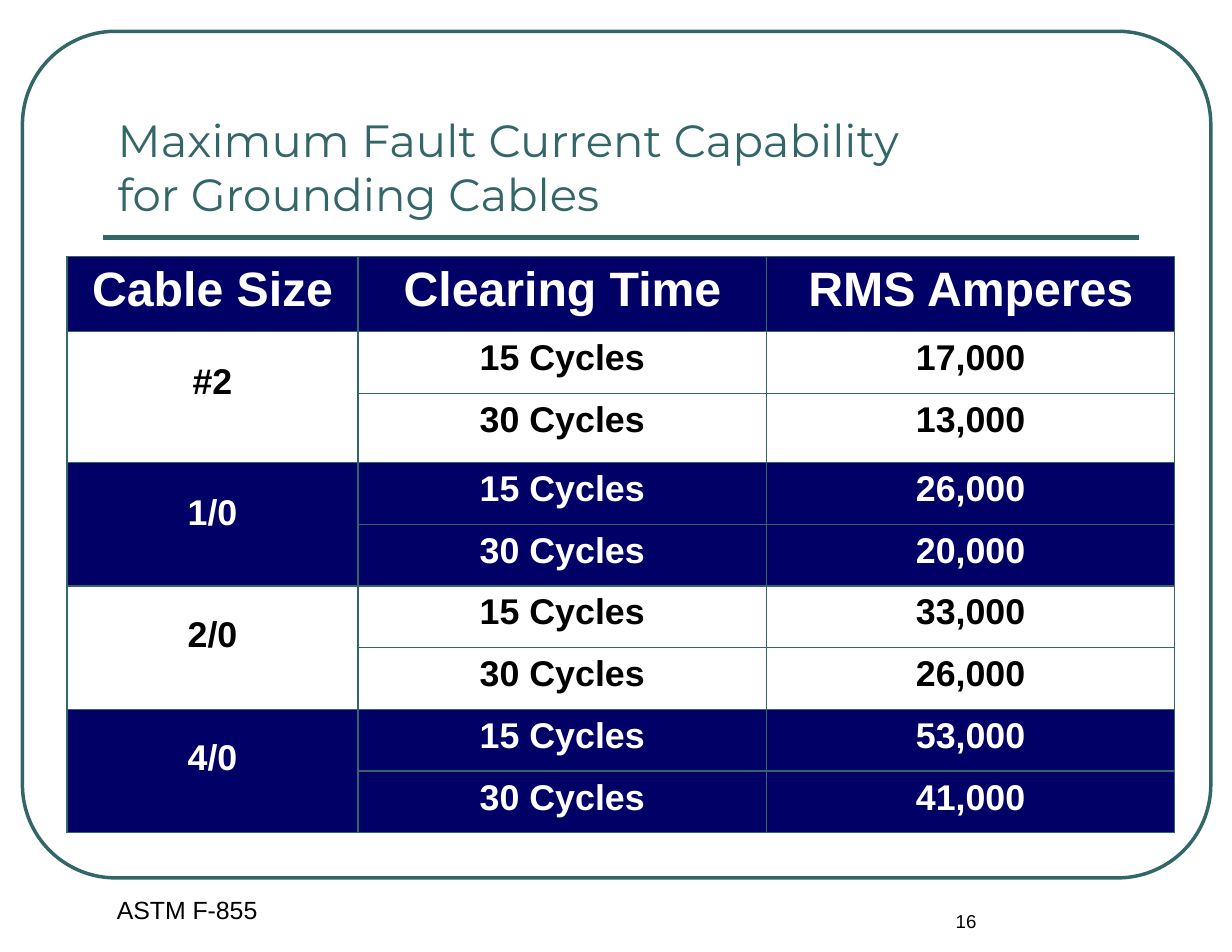
from lxml import etree
from pptx import Presentation
from pptx.dml.color import RGBColor
from pptx.enum.shapes import MSO_CONNECTOR, MSO_SHAPE
from pptx.enum.text import MSO_ANCHOR, MSO_AUTO_SIZE, PP_ALIGN
from pptx.oxml.ns import qn
from pptx.util import Cm, Pt

CENTER, LEFT = PP_ALIGN.CENTER, PP_ALIGN.LEFT
BOTTOM = MSO_ANCHOR.BOTTOM
NO_FIT = MSO_AUTO_SIZE.NONE
ROUNDED = MSO_SHAPE.ROUNDED_RECTANGLE
STRAIGHT = MSO_CONNECTOR.STRAIGHT

TEAL, NAVY, WHITE, BLACK = "336666", "000066", "FFFFFF", "000000"


def color(value):
    return RGBColor.from_string(value)


class CableSlide:
    """Holds the slide and its style."""

    insets = {"margin_left": Cm(0.28), "margin_right": Cm(0.28),
              "margin_top": Cm(0.15), "margin_bottom": Cm(0.15)}

    def __init__(self, slide):
        self.slide = slide
        self.shapes = slide.shapes

    def apply(self, target, values):
        for name, value in values.items():
            setattr(target, name, value)

    def set_text(self, frame, text, size, ink, font="Arial", bold=False,
                 align=CENTER, spacing=None):
        frame.text = text
        paragraph = frame.paragraphs[0]
        self.apply(paragraph, {"alignment": align, "line_spacing": spacing})
        for run in paragraph.runs:
            self.apply(run.font, {"name": font, "size": Pt(size), "bold": bold})
            run.font.color.rgb = color(ink)

    def frame(self, left, top, width, height, radius):
        border = self.shapes.add_shape(ROUNDED, Cm(left), Cm(top), Cm(width), Cm(height))
        border.adjustments[0] = radius
        border.shadow.inherit = False
        border.fill.background()
        border.line.color.rgb = color(TEAL)
        border.line.width = Pt(2.25)

    def rule(self, left, right, y):
        rule = self.shapes.add_connector(STRAIGHT, Cm(left), Cm(y), Cm(right), Cm(y))
        rule.line.color.rgb = color(TEAL)
        rule.line.width = Pt(3)
        etree.SubElement(rule._element.spPr, qn("a:effectLst"))

    def title(self, text, left, top, width, height):
        title = self.shapes.title
        self.apply(title, {"left": Cm(left), "top": Cm(top),
                           "width": Cm(width), "height": Cm(height)})
        self.apply(title.text_frame, {**self.insets, "vertical_anchor": BOTTOM,
                                      "auto_size": NO_FIT, "word_wrap": True})
        self.set_text(title.text_frame, text, 29, TEAL, "Montserrat", align=LEFT)

    def label(self, text, left, top, width, height, size, wrap=True):
        label = self.shapes.add_textbox(Cm(left), Cm(top), Cm(width), Cm(height))
        label.text_frame.word_wrap = wrap
        self.set_text(label.text_frame, text, size, BLACK)

    def table(self, left, top, widths, heights):
        table = self.shapes.add_table(
            len(heights), len(widths), Cm(left), Cm(top),
            Cm(sum(widths)), Cm(sum(heights))).table
        for column, width in zip(table.columns, widths):
            column.width = Cm(width)
        for row, height in zip(table.rows, heights):
            row.height = Cm(height)
        return table

    def cell(self, cell, text, size, ink, fill, spacing=None):
        self.apply(cell, self.insets)
        if text:
            self.set_text(cell.text_frame, text, size, ink, bold=True, spacing=spacing)
        properties = cell._tc.get_or_add_tcPr()
        for side in ("a:lnL", "a:lnR", "a:lnT", "a:lnB"):
            edge = etree.SubElement(properties, qn(side), w=str(Pt(1)))
            paint = etree.SubElement(edge, qn("a:solidFill"))
            etree.SubElement(paint, qn("a:srgbClr"), val=TEAL)
        cell.fill.solid()
        cell.fill.fore_color.rgb = color(fill)


def main():
    deck = Presentation()
    deck.slide_width, deck.slide_height = Cm(27.94), Cm(21.59)
    page = CableSlide(deck.slides.add_slide(deck.slide_layouts[5]))

    # Border, title and rule
    page.frame(0.51, 0.71, 26.95, 19.2, 0.11)
    page.rule(2.34, 25.83, 5.38)
    page.title("Maximum Fault Current Capability\vfor Grounding Cables",
               2.39, 1.55, 23.83, 3.61)

    # Ratings: cable size, line spacing of its cell, amperes per clearing time
    headings = ["Cable Size", "Clearing Time", "RMS Amperes"]
    clearing_times = ["15 Cycles", "30 Cycles"]
    ratings = [
        ("#2", 1.6, ["17,000", "13,000"]),
        ("1/0", 1.6, ["26,000", "20,000"]),
        ("2/0", 1.55, ["33,000", "26,000"]),
        ("4/0", 1.55, ["53,000", "41,000"]),
    ]
    table = page.table(1.52, 5.82, [6.6, 9.27, 9.25], [1.7, 1.4, 1.57] + [1.4] * 6)
    for column, heading in enumerate(headings):
        page.cell(table.cell(0, column), heading, 31, WHITE, NAVY)
    for group, (cable, spacing, amperes) in enumerate(ratings):
        ink, fill = (WHITE, NAVY) if group % 2 else (BLACK, WHITE)
        first = 1 + 2 * group
        for row, (time, current) in enumerate(zip(clearing_times, amperes), first):
            size_text = cable if row == first else ""
            page.cell(table.cell(row, 0), size_text, 23, ink, fill, spacing)
            page.cell(table.cell(row, 1), time, 23, ink, fill)
            page.cell(table.cell(row, 2), current, 23, ink, fill)
        table.cell(first, 0).merge(table.cell(first + 1, 0))

    # Standard and page number
    page.label("ASTM F-855", 2.39, 20.17, 3.71, 0.94, 16, wrap=False)
    page.label("16", 21.21, 20.52, 1.4, 0.76, 12)

    deck.save("out.pptx")


if __name__ == "__main__":
    main()
